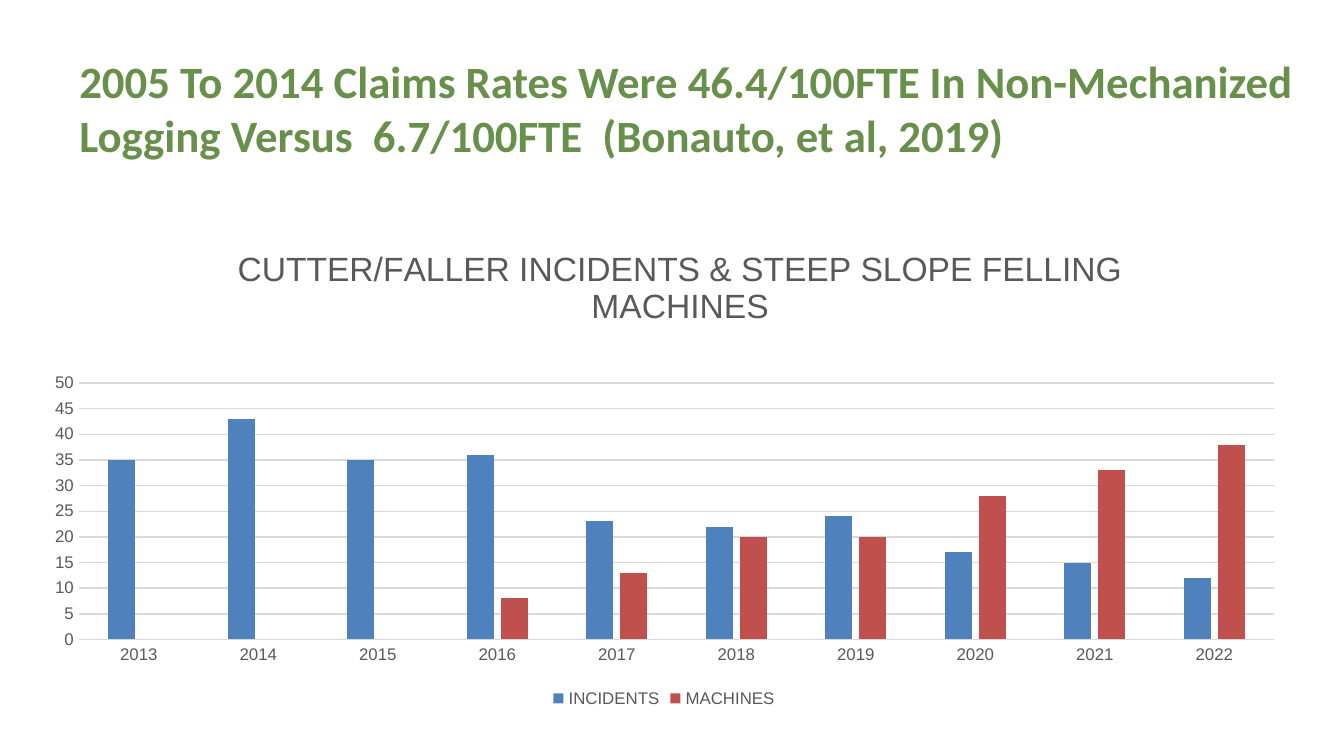
from dataclasses import dataclass

from lxml import etree
from pptx import Presentation
from pptx.chart.data import CategoryChartData
from pptx.dml.color import RGBColor
from pptx.enum.chart import XL_CHART_TYPE, XL_LEGEND_POSITION, XL_TICK_MARK
from pptx.enum.text import MSO_ANCHOR, MSO_AUTO_SIZE, PP_ALIGN
from pptx.oxml.ns import qn
from pptx.util import Inches, Pt

CLUSTERED = XL_CHART_TYPE.COLUMN_CLUSTERED
BOTTOM = XL_LEGEND_POSITION.BOTTOM
NO_TICK = XL_TICK_MARK.NONE
MIDDLE = MSO_ANCHOR.MIDDLE
NO_FIT = MSO_AUTO_SIZE.NONE
LEFT = PP_ALIGN.LEFT

HEADLINE = ("2005 To 2014 Claims Rates Were 46.4/100FTE In Non-Mechanized "
            "Logging Versus  6.7/100FTE  (Bonauto, et al, 2019)")
CHART_TITLE = "CUTTER/FALLER INCIDENTS & STEEP SLOPE FELLING MACHINES"
YEARS = [str(year) for year in range(2013, 2023)]
SERIES = {
    "INCIDENTS": [35, 43, 35, 36, 23, 22, 24, 17, 15, 12],
    "MACHINES": [None, None, None, 8, 13, 20, 20, 28, 33, 38],
}


@dataclass(frozen=True)
class Theme:
    heading_font: str = "Calibri"
    chart_font: str = "Arial"
    heading: str = "69904A"
    label: str = "595959"
    rule: str = "D9D9D9"
    series: tuple = ("4F81BD", "C0504D")
    heading_size: float = 24
    chart_title_size: float = 18
    label_size: float = 9
    rule_width: float = 0.75


def set_all(target, values):
    for name, value in values.items():
        setattr(target, name, value)


def style_font(font, name, size, color, bold=False):
    set_all(font, {"name": name, "size": Pt(size), "bold": bold})
    font.color.rgb = RGBColor.from_string(color)


def place_in_chart(element, index, **shares):
    """Give a chart part a fixed layout, as shares of the chart's size."""
    for old in element.findall(qn("c:layout")):
        element.remove(old)
    layout = etree.Element(qn("c:layout"))
    manual = etree.SubElement(layout, qn("c:manualLayout"))
    if "w" in shares:
        etree.SubElement(manual, qn("c:layoutTarget"), val="inner")
    for mode in ("xMode", "yMode"):
        etree.SubElement(manual, qn(f"c:{mode}"), val="edge")
    for name, share in shares.items():
        etree.SubElement(manual, qn(f"c:{name}"), val=str(share))
    element.insert(index, layout)


class SlideBuilder:
    def __init__(self, deck, theme):
        self.deck, self.theme = deck, theme
        self.slide = deck.slides.add_slide(deck.slide_layouts[5])

    def area(self, left, top, width, height):
        """Turn percentages of the slide's size into lengths."""
        wide, high = self.deck.slide_width, self.deck.slide_height
        return (int(left * wide / 100), int(top * high / 100),
                int(width * wide / 100), int(height * high / 100))

    def title(self, text, *shares):
        theme, box = self.theme, self.slide.shapes.title
        set_all(box, dict(zip(("left", "top", "width", "height"),
                              self.area(*shares))))
        frame = box.text_frame
        set_all(frame, {
            "word_wrap": True, "auto_size": NO_FIT, "vertical_anchor": MIDDLE,
            "margin_left": Inches(0.07), "margin_right": Inches(0.07),
            "margin_top": Inches(0.04), "margin_bottom": Inches(0.04),
        })
        para = frame.paragraphs[0]
        para.alignment = LEFT
        span = para.add_run()
        span.text = text
        style_font(span.font, theme.heading_font, theme.heading_size,
                   theme.heading, bold=True)

    def column_chart(self, title, categories, series, *shares):
        theme = self.theme
        data = CategoryChartData()
        data.categories = categories
        for name, values in series.items():
            data.add_series(name, values)
        chart = self.slide.shapes.add_chart(
            CLUSTERED, *self.area(*shares), data).chart
        style_font(chart.font, theme.chart_font, theme.label_size, theme.label)

        chart.has_title = True
        para = chart.chart_title.text_frame.paragraphs[0]
        span = para.add_run()
        span.text = title
        style_font(span.font, theme.chart_font, theme.chart_title_size,
                   theme.label)

        chart.has_legend = True
        set_all(chart.legend, {"position": BOTTOM, "include_in_layout": False})

        plot = chart.plots[0]
        set_all(plot, {"gap_width": 219, "overlap": -27,
                       "vary_by_categories": False})
        for column, color in zip(plot.series, theme.series):
            column.format.fill.solid()
            column.format.fill.fore_color.rgb = RGBColor.from_string(color)
            column.invert_if_negative = False
        self.axes(chart)

        place_in_chart(chart.chart_title._element, 1, x=0.16, y=0.04)
        place_in_chart(plot._element.getparent(), 0,
                       x=0.04, y=0.33, w=0.94, h=0.52)

    def axes(self, chart):
        theme, values = self.theme, chart.value_axis
        for axis in (chart.category_axis, values):
            set_all(axis, {"major_tick_mark": NO_TICK,
                           "minor_tick_mark": NO_TICK})
            style_font(axis.tick_labels.font, theme.chart_font,
                       theme.label_size, theme.label)
        set_all(values, {"minimum_scale": 0, "maximum_scale": 50,
                         "major_unit": 5, "has_major_gridlines": True})
        values.format.line.fill.background()
        for part in (chart.category_axis, values.major_gridlines):
            part.format.line.width = Pt(theme.rule_width)
            part.format.line.color.rgb = RGBColor.from_string(theme.rule)


def main():
    deck = Presentation()
    width = Inches(10)
    set_all(deck, {"slide_width": width, "slide_height": width * 9 // 16})
    page = SlideBuilder(deck, Theme())
    page.title(HEADLINE, 5.2, 5.6, 92.5, 17.2)
    page.column_chart(CHART_TITLE, YEARS, SERIES, 2.1, 29.15, 94.6, 65.25)
    deck.save("out.pptx")


if __name__ == "__main__":
    main()
